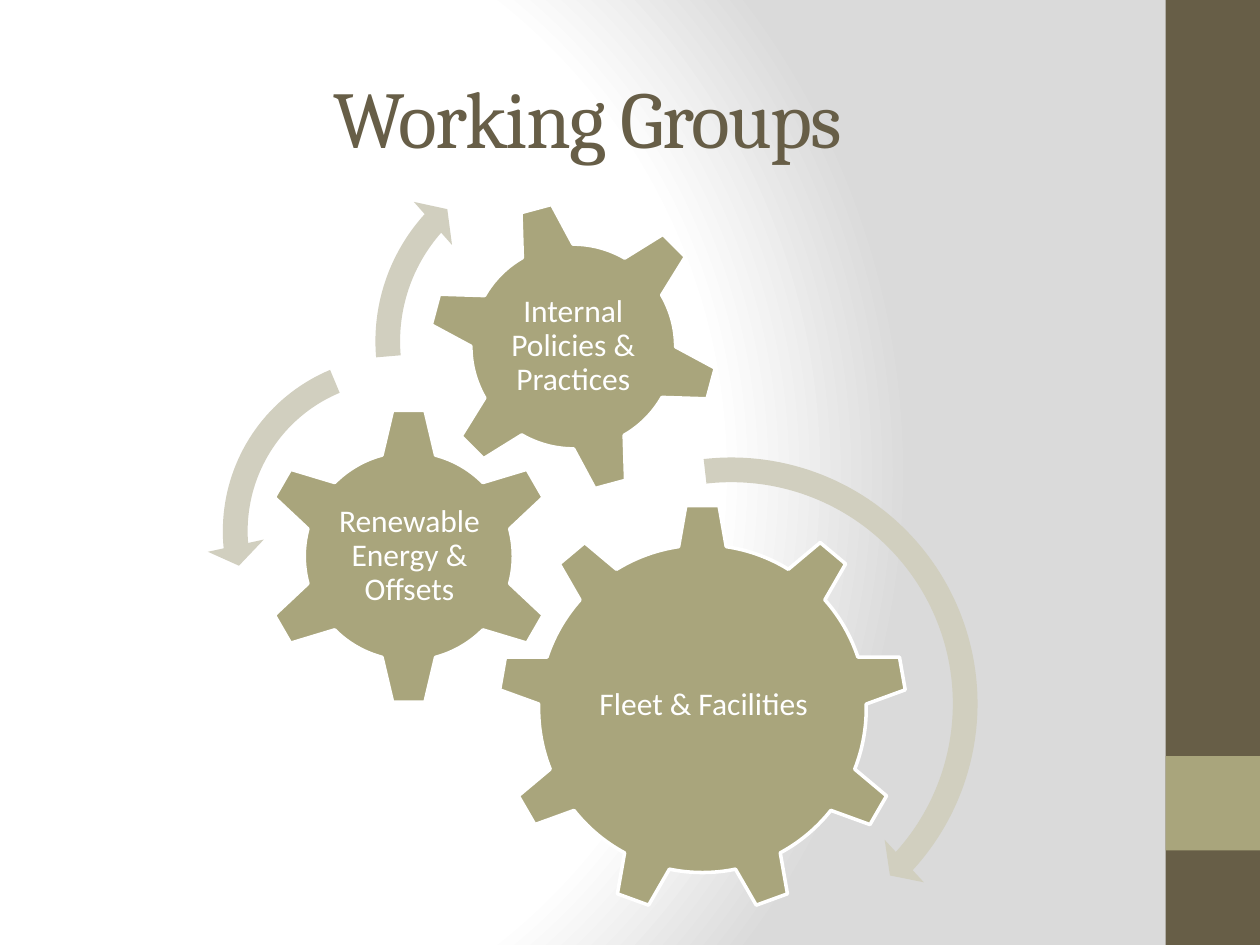
from dataclasses import dataclass

import pptx
import pptx.dml.color
import pptx.enum.shapes
import pptx.enum.text
import pptx.oxml
import pptx.oxml.ns
import pptx.shapes.autoshape
import pptx.shapes.shapetree
import pptx.slide
import pptx.text.text
import pptx.util

Inches = pptx.util.Inches
Pt = pptx.util.Pt
RGBColor = pptx.dml.color.RGBColor
Shape = pptx.enum.shapes.MSO_SHAPE

BROWN = RGBColor(0x67, 0x5E, 0x47)
OLIVE = RGBColor(0xA9, 0xA5, 0x7C)
PALE_OLIVE = RGBColor(0xD1, 0xCF, 0xBF)
WHITE = RGBColor(0xFF, 0xFF, 0xFF)
GREY = RGBColor(0xDA, 0xDA, 0xDA)


@dataclass
class Gear:
    label: str
    kind: Shape
    left: float
    top: float
    size: float
    label_area: tuple[float, float, float, float]
    rotation: float = 0


@dataclass
class TurnArrow:
    """Angles are in degrees, clockwise from the right."""
    kind: Shape
    left: float
    top: float
    size: float
    thickness: float
    head_angle: float
    end_angle: float
    start_angle: float
    head_width: float


GEARS = [
    Gear("Fleet & Facilities", Shape.GEAR_9, 3.95, 4, 3.25, (4.61, 4.76, 1.95, 1.67)),
    Gear("Renewable Energy & Offsets", Shape.GEAR_6, 2.06, 3.23, 2.37,
         (2.66, 3.83, 1.18, 1.17)),
    Gear("Internal Policies & Practices", Shape.GEAR_6, 3.39, 1.59, 2.32,
         (3.9, 2.1, 1.3, 1.3), rotation=345),
]
ARROWS = [
    TurnArrow(Shape.CIRCULAR_ARROW, 3.72, 3.5, 4.17, 0.047, 4.98, 42.32, 263.54, 0.055),
    TurnArrow(Shape.LEFT_CIRCULAR_ARROW, 1.64, 2.7, 3.03, 0.065, 7.17, 174.82, 247.3, 0.075),
    TurnArrow(Shape.CIRCULAR_ARROW, 2.85, 1.08, 3.26, 0.06, 6.57, 221.9, 175.14, 0.07),
]


def set_background(page: pptx.slide.Slide) -> None:
    """Fill the page with a gradient that spreads from the left."""
    stops = "".join(
        f'<a:gs pos="{percent * 1000}"><a:srgbClr val="{color}"/></a:gs>'
        for percent, color in [(0, WHITE), (75, WHITE), (100, GREY)]
    )
    background = pptx.oxml.parse_xml(
        f'<p:bg {pptx.oxml.ns.nsdecls("p", "a")}><p:bgPr>'
        f'<a:gradFill rotWithShape="1"><a:gsLst>{stops}</a:gsLst><a:path path="circle">'
        '<a:fillToRect l="20000" t="50000" r="100000" b="50000"/></a:path></a:gradFill>'
        "<a:effectLst/></p:bgPr></p:bg>"
    )
    page.element.cSld.insert(0, background)


def add_filled(shapes: pptx.shapes.shapetree.SlideShapes, kind: Shape, left: float,
               top: float, width: float, height: float,
               color: RGBColor) -> pptx.shapes.autoshape.Shape:
    shape = shapes.add_shape(kind, Inches(left), Inches(top), Inches(width), Inches(height))
    shape.shadow.inherit = False
    shape.fill.solid()
    shape.fill.fore_color.rgb = color
    shape.line.fill.background()
    return shape


def format_text(frame: pptx.text.text.TextFrame, text: str, font: str, size: float,
                color: RGBColor) -> pptx.text.text._Paragraph:
    frame.text = text
    frame.word_wrap = True
    frame.vertical_anchor = pptx.enum.text.MSO_ANCHOR.MIDDLE
    para = frame.paragraphs[0]
    para.alignment = pptx.enum.text.PP_ALIGN.CENTER
    para.font.name = font
    para.font.size = Pt(size)
    para.font.color.rgb = color
    return para


def add_title(page: pptx.slide.Slide, text: str) -> None:
    title = page.shapes.title
    title.left, title.top = Inches(0.5), Inches(0.3)
    title.width, title.height = Inches(8.33), Inches(1.25)
    para = format_text(title.text_frame, text, "Cambria", 46, BROWN)
    para.runs[0].font._element.set("spc", "-100")


def add_gear(shapes: pptx.shapes.shapetree.GroupShapes, gear: Gear) -> None:
    shape = add_filled(shapes, gear.kind, gear.left, gear.top, gear.size, gear.size, OLIVE)
    shape.rotation = gear.rotation
    shape.line.color.rgb = WHITE
    shape.line.width = Pt(2)

    box = shapes.add_textbox(*map(Inches, gear.label_area))
    frame = box.text_frame
    frame.margin_left = frame.margin_right = Inches(0.03)
    frame.margin_top = frame.margin_bottom = Inches(0.03)
    para = format_text(frame, gear.label, "Calibri", 18, WHITE)
    para.line_spacing = 0.9


def add_turn_arrow(shapes: pptx.shapes.shapetree.GroupShapes, arrow: TurnArrow) -> None:
    shape = add_filled(shapes, arrow.kind, arrow.left, arrow.top, arrow.size, arrow.size,
                       PALE_OLIVE)
    angles = [arrow.head_angle, arrow.end_angle, arrow.start_angle]
    # Angles are stored in 60000ths of a degree, adjustments in 100000ths.
    values = [arrow.thickness, *(angle * 0.6 for angle in angles), arrow.head_width]
    for index, value in enumerate(values):
        shape.adjustments[index] = value


def main() -> None:
    deck = pptx.Presentation()
    deck.slide_width, deck.slide_height = Inches(10), Inches(7.5)
    page = deck.slides.add_slide(deck.slide_layouts[5])
    set_background(page)
    add_filled(page.shapes, Shape.RECTANGLE, 9.25, 0, 0.75, 7.5, BROWN)
    add_filled(page.shapes, Shape.RECTANGLE, 9.25, 6, 0.75, 0.75, OLIVE)
    add_title(page, "Working Groups")

    diagram = page.shapes.add_group_shape()
    for gear in GEARS:
        add_gear(diagram.shapes, gear)
    for arrow in ARROWS:
        add_turn_arrow(diagram.shapes, arrow)
    deck.save("out.pptx")


if __name__ == "__main__":
    main()
